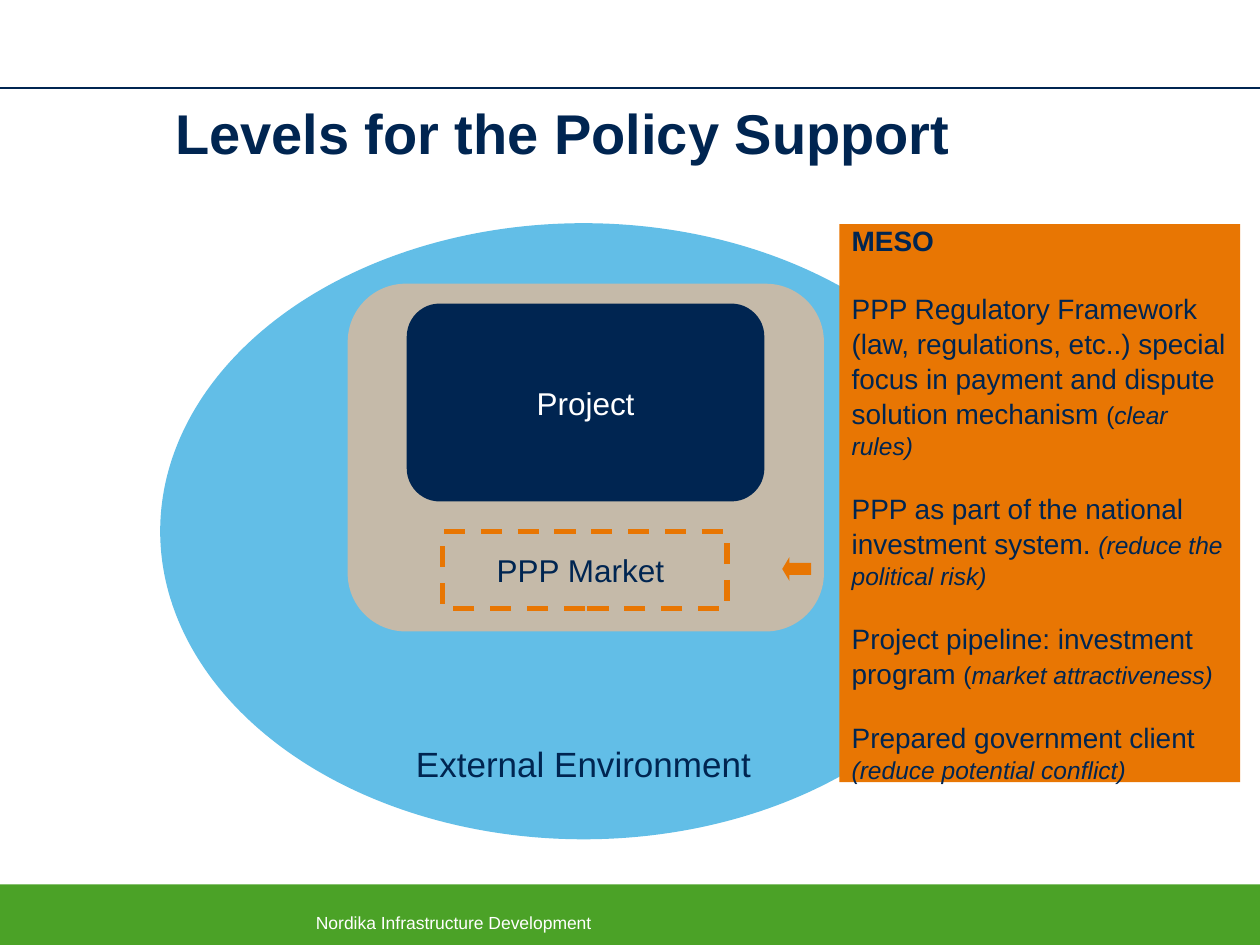
from lxml import etree
from pptx import Presentation, util as u
from pptx.dml.color import RGBColor
from pptx.enum import dml, shapes, text
from pptx.oxml.ns import qn

NAVY = RGBColor(0x00, 0x25, 0x51)
WHITE = RGBColor(0xFF, 0xFF, 0xFF)
GREEN = RGBColor(0x4B, 0xA2, 0x27)
SKY = RGBColor(0x62, 0xBE, 0xE7)
SAND = RGBColor(0xC5, 0xBA, 0xA9)
ORANGE = RGBColor(0xE8, 0x76, 0x03)

BIG, SMALL = 16, 14
MESO_BLOCKS = [
    (0, [[("MESO", BIG, True, False)]]),
    (19.2, [
        [("PPP Regulatory Framework", BIG, False, False)],
        [("(law, regulations, etc..) special", BIG, False, False)],
        [("focus in payment and dispute", BIG, False, False)],
        [("solution mechanism ", BIG, False, False), ("(", SMALL, False, False),
         ("clear\vrules)", SMALL, False, True)],
    ]),
    (16.8, [
        [("PPP as part of the national", BIG, False, False)],
        [("investment system. ", BIG, False, False), ("(reduce the", SMALL, False, True)],
        [("political risk)", SMALL, False, True)],
    ]),
    (16.8, [
        [("Project pipeline: investment", BIG, False, False)],
        [("program ", BIG, False, False), ("(", SMALL, False, False),
         ("market attractiveness)", SMALL, False, True)],
    ]),
    (16.8, [
        [("Prepared government client", BIG, False, False)],
        [("(reduce potential conflict)", SMALL, False, True)],
    ]),
]


class Deck:
    """Holds the font and the current slide, and draws each kind of element."""

    font = "Arial"

    def __init__(self, width, height):
        self.prs = Presentation()
        self.prs.slide_width, self.prs.slide_height = u.Cm(width), u.Cm(height)
        self.s = self.prs.slides.add_slide(self.prs.slide_layouts[6])

    def shape(self, kind, box, fill=None, line=None, width=0.75, dash=None, adj=None):
        sp = self.s.shapes.add_shape(kind, *map(u.Cm, box))
        sp.shadow.inherit = False
        if fill is None:
            sp.fill.background()
        else:
            sp.fill.solid()
            sp.fill.fore_color.rgb = fill
        if line is None:
            sp.line.fill.background()
        else:
            sp.line.color.rgb = line
            sp.line.width = u.Pt(width)
            sp.line.dash_style = dash
        for i, value in enumerate(adj or []):
            sp.adjustments[i] = value
        return sp

    def rule(self, x1, y1, x2, y2, color, width):
        c = self.s.shapes.add_connector(shapes.MSO_CONNECTOR.STRAIGHT, *map(u.Cm, (x1, y1, x2, y2)))
        c.line.color.rgb = color
        c.line.width = u.Pt(width)
        etree.SubElement(c._element.spPr, qn("a:effectLst"))

    def textbox(self, box):
        return self.s.shapes.add_textbox(*map(u.Cm, box))

    def label(self, sp, words, size, color, align=text.PP_ALIGN.CENTER,
              anchor=text.MSO_ANCHOR.MIDDLE, bold=False):
        tf = sp.text_frame
        tf.word_wrap = True
        tf.vertical_anchor = anchor
        p = tf.paragraphs[0]
        p.text = words
        p.alignment = align
        p.font.name, p.font.size, p.font.bold = self.font, u.Pt(size), bold
        p.font.color.rgb = color
        return tf

    def blocks(self, sp, blocks, color, spacing):
        tf = sp.text_frame
        tf.word_wrap = False
        tf.vertical_anchor = text.MSO_ANCHOR.MIDDLE
        p = tf.paragraphs[0]
        for gap, lines in blocks:
            for i, runs in enumerate(lines):
                if p.text:
                    p = tf.add_paragraph()
                if gap and i == 0:
                    p.space_before = u.Pt(gap)
                p.alignment = text.PP_ALIGN.LEFT
                p.line_spacing = spacing
                for words, size, bold, italic in runs:
                    first, *rest = words.split("\v")
                    self.run(p, first, size, bold, italic, color)
                    for part in rest:
                        p.add_line_break()
                        self.run(p, part, size, bold, italic, color)

    def run(self, p, words, size, bold, italic, color):
        r = p.add_run()
        r.text = words
        f = r.font
        f.name, f.size, f.bold, f.italic = self.font, u.Pt(size), bold, italic
        f.color.rgb = color


def main():
    kind = shapes.MSO_SHAPE
    left, top = text.PP_ALIGN.LEFT, text.MSO_ANCHOR.TOP
    d = Deck(25.4, 19.05)

    d.shape(kind.RECTANGLE, (0, 17.83, 25.4, 1.22), GREEN)
    d.rule(0, 1.78, 25.4, 1.78, NAVY, 1)
    footer = d.textbox((6.12, 18.26, 15.6, 0.51))
    d.label(footer, "Nordika Infrastructure Development", 10, WHITE, left, top)

    d.shape(kind.OVAL, (3.23, 4.5, 17.07, 12.42), SKY)
    environment = d.textbox((3.23, 14.9, 17.07, 1))
    d.label(environment, "External Environment", 20, NAVY)

    d.shape(kind.ROUNDED_RECTANGLE, (7.01, 5.72, 9.6, 7.01), SAND, adj=[0.167])
    d.shape(kind.LEFT_ARROW, (15.77, 11.23, 0.58, 0.48), ORANGE, adj=[0.5, 0.3])
    meso = d.shape(kind.RECTANGLE, (16.92, 4.52, 8.08, 11.25), ORANGE)
    d.blocks(meso, MESO_BLOCKS, NAVY, 1.04)
    market = d.shape(kind.RECTANGLE, (8.92, 10.72, 5.74, 1.55), line=ORANGE, width=3,
                     dash=dml.MSO_LINE.DASH)
    d.label(market, "PPP Market ", 18, NAVY)
    project = d.shape(kind.ROUNDED_RECTANGLE, (8.2, 6.12, 7.21, 3.99), NAVY, adj=[0.167])
    d.label(project, "Project", 18, WHITE)

    title = d.shape(kind.RECTANGLE, (3.4, 2.01, 17.75, 1.5), WHITE, WHITE)
    tf = d.label(title, "Levels for the Policy Support", 32, NAVY, left, top, True)
    tf.margin_left = tf.margin_right = tf.margin_top = tf.margin_bottom = u.Cm(0.13)
    tf.paragraphs[0].line_spacing = 0.9

    d.prs.save("out.pptx")


if __name__ == "__main__":
    main()
